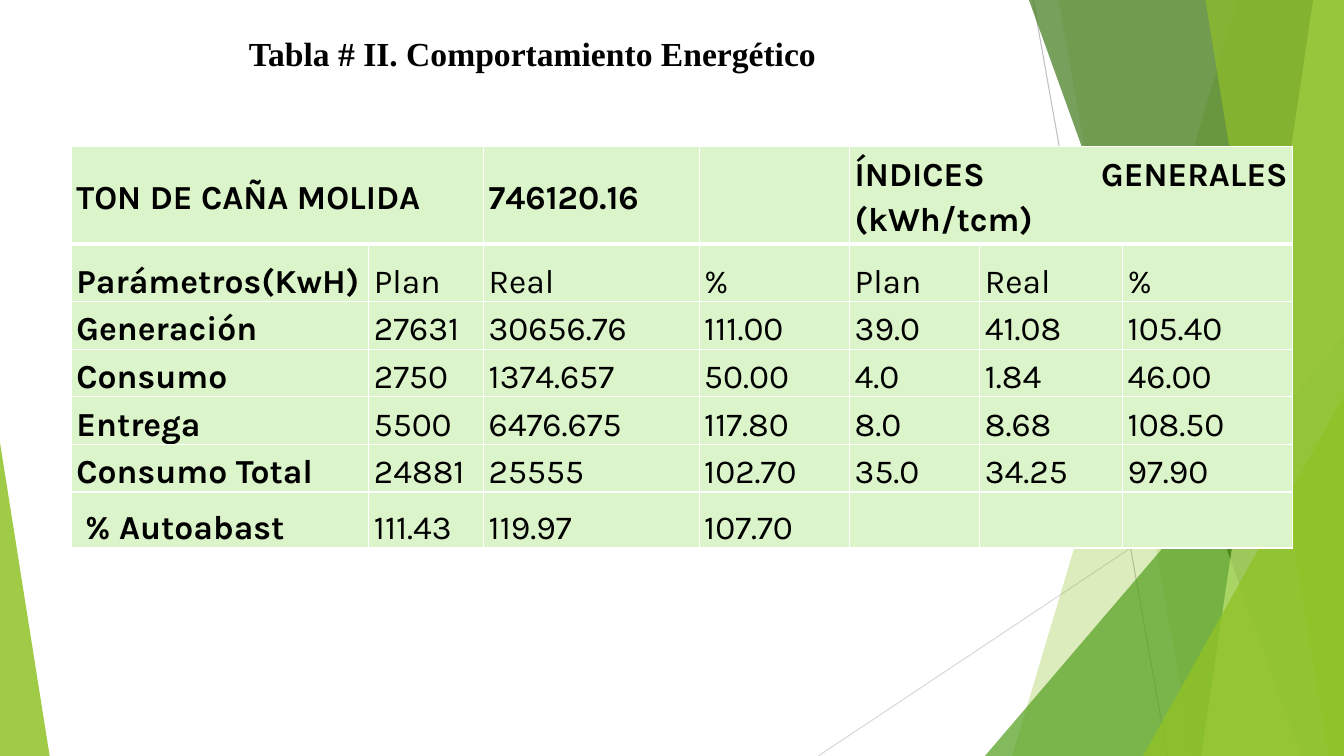
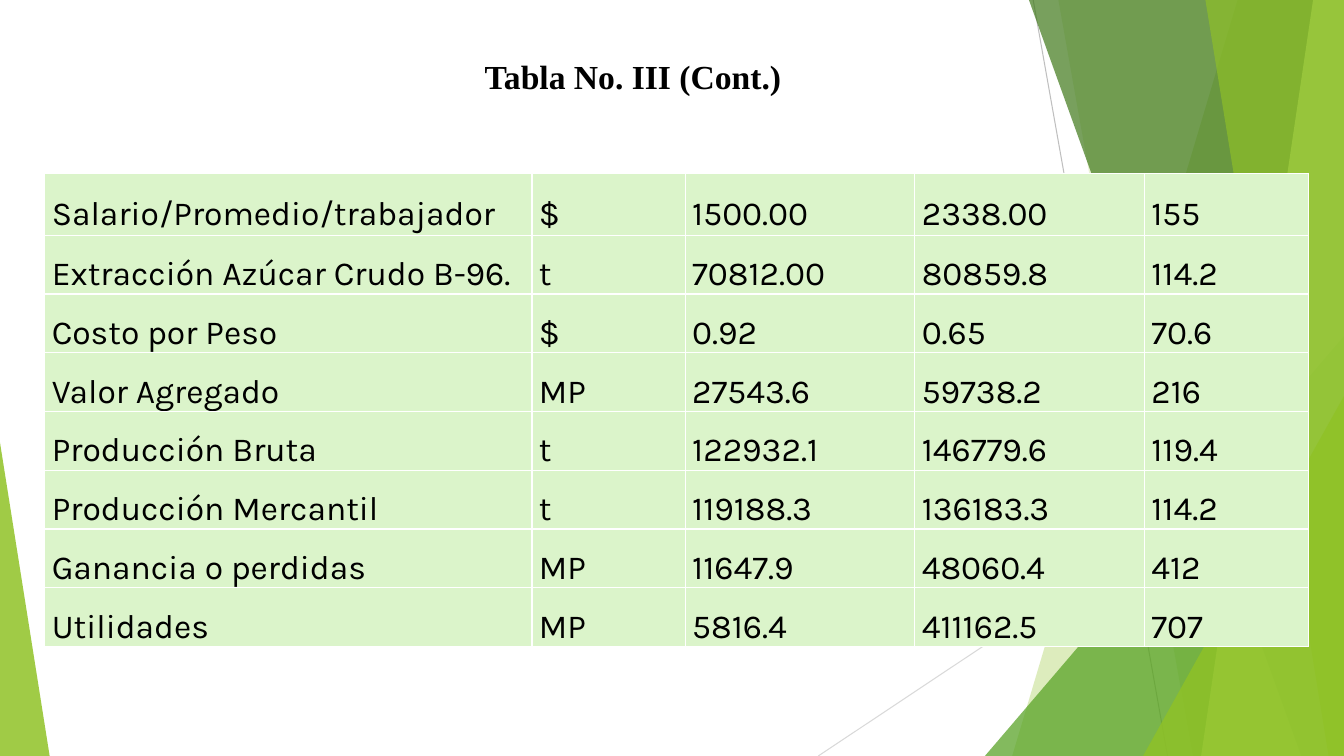
from lxml.etree import SubElement
from pptx import Presentation
from pptx.dml.color import RGBColor
from pptx.enum.shapes import MSO_CONNECTOR, MSO_SHAPE
from pptx.enum.text import MSO_ANCHOR as ANCHOR, MSO_AUTO_SIZE as AUTO, PP_ALIGN as ALIGN
from pptx.oxml.ns import qn
from pptx.util import Pt

WHITE = RGBColor(0xFF, 0xFF, 0xFF)
BLACK = RGBColor(0x00, 0x00, 0x00)
GREY = RGBColor(0xBF, 0xBF, 0xBF)
LIGHT_GREY = RGBColor(0xD9, 0xD9, 0xD9)
LIME = RGBColor(0x90, 0xC2, 0x26)
GREEN = RGBColor(0x54, 0xA0, 0x21)
DARK_GREEN = RGBColor(0x3F, 0x78, 0x19)
PALE_LIME = RGBColor(0xC0, 0xE4, 0x74)
CELL_GREEN = RGBColor(0xDB, 0xF4, 0xCA)

WIDTH, HEIGHT = 960, 540


def write(tf, text, font="Karla", size=24, bold=False, align=ALIGN.JUSTIFY,
          anchor=ANCHOR.MIDDLE, spacing=1.0):
    tf.vertical_anchor = anchor
    p = tf.paragraphs[0]
    p.alignment = align
    p.line_spacing = spacing
    r = p.add_run()
    r.text = text
    r.font.name = font
    r.font.size = Pt(size)
    r.font.bold = bold
    r.font.color.rgb = BLACK


prs = Presentation()
prs.slide_width, prs.slide_height = Pt(WIDTH), Pt(HEIGHT)
layout = prs.slide_layouts.get_by_name("Title Only")

# Backdrop: drawn once, then moved to the layout that both slides use
s = prs.slides.add_slide(layout)
backdrop = []
for x1, y1, x2, y2, color in [
    (738, 0, 834, HEIGHT, GREY),
    (WIDTH, 290, 584.5, HEIGHT, LIGHT_GREY),
]:
    line = s.shapes.add_connector(MSO_CONNECTOR.STRAIGHT, Pt(x1), Pt(y1), Pt(x2), Pt(y2))
    line.line.color.rgb = color
    line.line.width = Pt(0.75)
    SubElement(line._element.spPr, qn("a:effectLst"))
    backdrop.append(line)

# Bands run from (top x, bottom x) to the right edge; triangles have (left, top, width, tip)
for outline, color, opacity in [
    ((884, 723), LIME, 30),
    ((756, 852), LIME, 20),
    ((703.5, 240, 256.5, 1), GREEN, 72),
    ((735, 929.5), DARK_GREEN, 70),
    ((938, 858), PALE_LIME, 70),
    ((861, 949), LIME, 65),
    ((816.5, 283, 143.5, 1), LIME, 80),
    ((0, 316, 35.5, 0), LIME, 85),
]:
    if len(outline) == 2:
        top_x, bottom_x = outline
        builder = s.shapes.build_freeform(Pt(top_x), 0)
        builder.add_line_segments(
            [(Pt(WIDTH), 0), (Pt(WIDTH), Pt(HEIGHT)), (Pt(bottom_x), Pt(HEIGHT))], close=True)
        sp = builder.convert_to_shape()
    else:
        left, top, width, tip = outline
        sp = s.shapes.add_shape(MSO_SHAPE.ISOSCELES_TRIANGLE, Pt(left), Pt(top),
                                Pt(width), Pt(HEIGHT - top))
        sp.adjustments[0] = tip
    sp.shadow.inherit = False
    sp.line.fill.background()
    sp.fill.solid()
    sp.fill.fore_color.rgb = color
    rgb = sp._element.spPr.find(qn("a:solidFill"))[0]
    SubElement(rgb, qn("a:alpha"), val=str(opacity * 1000))
    backdrop.append(sp)

for sp in backdrop:
    layout.shapes._spTree.append(sp._element)

energy = dict(
    title="Tabla # II. Comportamiento Energético", title_box=(170.5, 20, 443, 36),
    origin=(51, 104.5), cols=[212.5, 82, 154, 107.5, 93, 102, 121.5],
    rows=[70, 41, 34, 34, 34, 34, 40],
    inset=3.6, spacing=1.15, headings=True, merges=[(0, 1), (4, 6)],
    data=[
        ["TON DE CAÑA MOLIDA", "", "746120.16", "", "ÍNDICES GENERALES (kWh/tcm)", "", ""],
        ["Parámetros(KwH)", "Plan", "Real", "%", "Plan", "Real", "%"],
        ["Generación", "27631", "30656.76", "111.00", "39.0", "41.08", "105.40"],
        ["Consumo", "2750", "1374.657", "50.00", "4.0", "1.84", "46.00"],
        ["Entrega", "5500", "6476.675", "117.80", "8.0", "8.68", "108.50"],
        ["Consumo Total", "24881", "25555", "102.70", "35.0", "34.25", "97.90"],
        [" % Autoabast", "111.43", "119.97", "107.70", "", "", ""],
    ])
results = dict(
    title="Tabla No. III (Cont.)", title_box=(339, 36, 235, 36),
    origin=(32, 124), cols=[348, 109.5, 164, 164, 117.5],
    rows=[44, 40] + [34] * 6,
    inset=5, spacing=1.5, headings=False, merges=[],
    data=[
        ["Salario/Promedio/trabajador", "$", "1500.00", "2338.00", "155"],
        ["Extracción Azúcar Crudo B-96.", "t", "70812.00", "80859.8", "114.2"],
        ["Costo por Peso", "$", "0.92", "0.65", "70.6"],
        ["Valor Agregado", "MP", "27543.6", "59738.2", "216"],
        ["Producción Bruta", "t", "122932.1", "146779.6", "119.4"],
        ["Producción Mercantil", "t", "119188.3", "136183.3", "114.2"],
        ["Ganancia o perdidas", "MP", "11647.9", "48060.4", "412"],
        ["Utilidades", "MP", "5816.4", "411162.5", "707"],
    ])

for s, content in [(s, energy), (prs.slides.add_slide(layout), results)]:
    title = s.shapes.title
    title.left, title.top, title.width, title.height = map(Pt, content["title_box"])
    title.text_frame.auto_size = AUTO.NONE
    write(title.text_frame, content["title"], font="Times New Roman", bold=True,
          align=ALIGN.LEFT)

    cols, rows, headings = content["cols"], content["rows"], content["headings"]
    left, top = content["origin"]
    table = s.shapes.add_table(len(rows), len(cols), Pt(left), Pt(top),
                               Pt(sum(cols)), Pt(sum(rows))).table
    table.first_row = table.horz_banding = False
    for column, width in zip(table.columns, cols):
        column.width = Pt(width)
    for row, height in zip(table.rows, rows):
        row.height = Pt(height)
    for first, last in content["merges"]:
        table.cell(0, first).merge(table.cell(0, last))

    for i, texts in enumerate(content["data"]):
        for j, text in enumerate(texts):
            cell = table.cell(i, j)
            cell.margin_left = cell.margin_right = Pt(content["inset"])
            cell.margin_top = cell.margin_bottom = 0
            for side in "LRTB":
                thick = headings and (i, side) in [(0, "B"), (1, "T")]
                border = SubElement(cell._tc.get_or_add_tcPr(), qn(f"a:ln{side}"),
                                    w=str(Pt(3 if thick else 1)))
                SubElement(SubElement(border, qn("a:solidFill")), qn("a:srgbClr"),
                           val=str(WHITE))
            cell.fill.solid()
            cell.fill.fore_color.rgb = CELL_GREEN
            if text:
                write(cell.text_frame, text, bold=headings and 0 in (i, j),
                      spacing=content["spacing"])
                cell.vertical_anchor = ANCHOR.BOTTOM if headings and i else ANCHOR.MIDDLE

prs.save("out.pptx")
